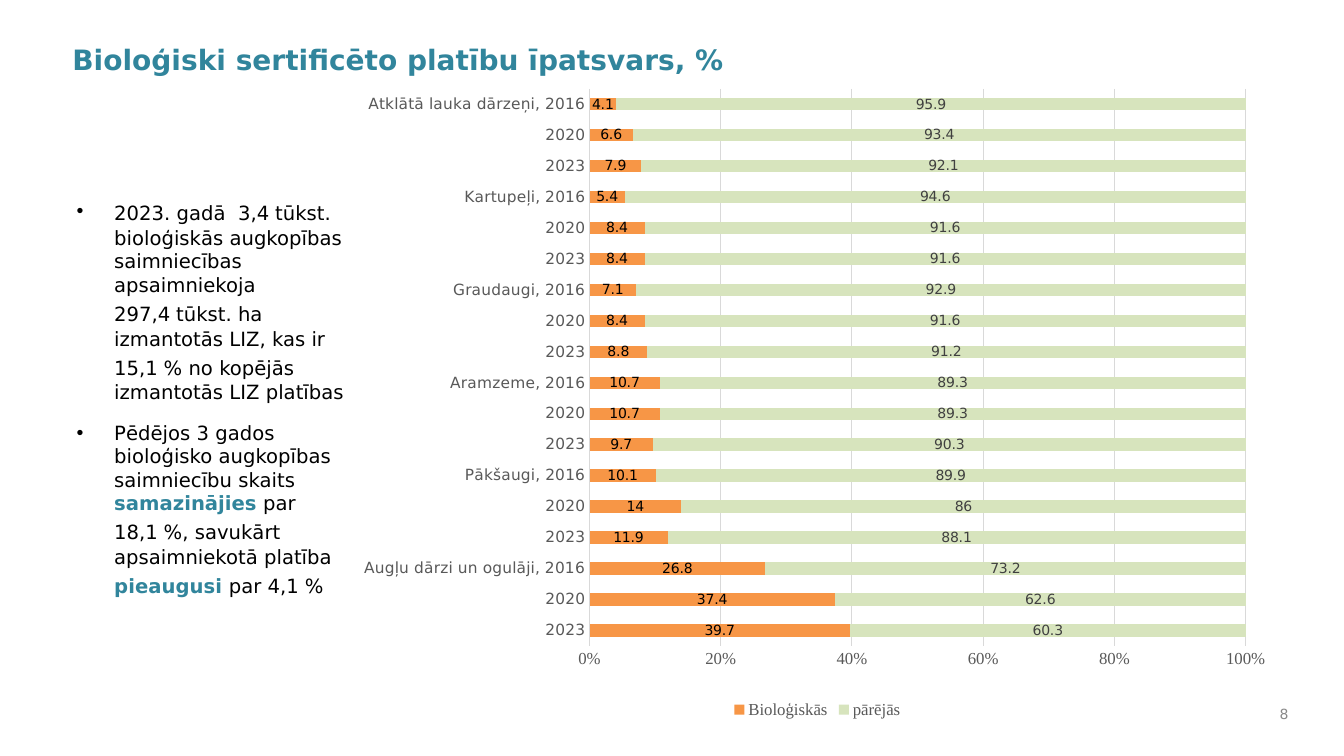
from lxml.etree import SubElement
from pptx import Presentation
from pptx.chart.data import CategoryChartData
from pptx.dml.color import RGBColor
from pptx.enum.chart import (XL_CHART_TYPE, XL_LABEL_POSITION,
                             XL_LEGEND_POSITION, XL_TICK_MARK)
from pptx.enum.text import MSO_ANCHOR, PP_ALIGN
from pptx.oxml import parse_xml
from pptx.oxml.ns import nsdecls, qn
from pptx.util import Cm, Pt

HUES = {"teal": "31859C", "black": "000000", "dark": "404040", "text": "595959",
        "page": "898989", "grid": "D9D9D9", "organic": "F79646", "rest": "D7E4BD"}
SANS, SERIF, GAP = "DejaVu Sans", "Times New Roman", "Cabin"
NBSP = chr(160)

TITLE = "Bioloģiski sertificēto platību īpatsvars, %"
PAGE = "8"
# Each bullet is a list of (text, is key word); "~" marks a no-break space
NOTES = [
    [("2023. gadā  3,4~tūkst. bioloģiskās augkopības saimniecības apsaimniekoja "
      "297,4~tūkst. ha izmantotās LIZ, kas ir 15,1~% no kopējās izmantotās LIZ "
      "platības", False)],
    [("Pēdējos 3 gados bioloģisko augkopības saimniecību skaits ", False),
     ("samazinājies", True),
     (" par 18,1~%, savukārt apsaimniekotā platība ", False),
     ("pieaugusi ", True), ("par 4,1~%", False)],
]
YEARS = ("2023", "2020", "2016")
# Organic share by crop, from the bottom bar up, in the order of YEARS
SHARES = {
    "Augļu dārzi un ogulāji": (39.7, 37.4, 26.8),
    "Pākšaugi": (11.9, 14, 10.1),
    "Aramzeme": (9.7, 10.7, 10.7),
    "Graudaugi": (8.8, 8.4, 7.1),
    "Kartupeļi": (8.4, 8.4, 5.4),
    "Atklātā lauka dārzeņi": (7.9, 6.6, 4.1),
}
SERIES = (("Bioloģiskās", "organic", "black"), ("pārējās", "rest", "dark"))
PLOT = {"x": 0.252, "y": 0.025, "w": 0.714, "h": 0.857}


def rgb(hue):
    return RGBColor.from_string(HUES[hue])


def style(font, size, hue, face=SANS, bold=False):
    font.size, font.name, font.bold = Pt(size), face, bold
    font.color.rgb = rgb(hue)


def write(para, text, size=14, **fmt):
    """Add text to a paragraph, with wider no-break spaces at each "~"."""
    for i, part in enumerate(text.split("~")):
        if i:
            run = para.add_run()
            run.text = NBSP
            style(run.font, 18, "black", GAP)
        run = para.add_run()
        run.text = part
        style(run.font, size, **fmt)


def add_box(slide, *place):
    frame = slide.shapes.add_textbox(*map(Cm, place)).text_frame
    frame.word_wrap = True
    return frame


def add_notes(slide):
    frame = add_box(slide, 1.68, 4.8, 7.34, 11.53)
    for i, note in enumerate(NOTES):
        para = frame.add_paragraph() if i else frame.paragraphs[0]
        para.space_before = para.space_after = Pt(6)
        props = para._p.get_or_add_pPr()
        props.set("marL", str(Cm(0.95)))
        props.set("indent", str(-Cm(0.95)))
        SubElement(props, qn("a:buFont")).set("typeface", "Arial")
        SubElement(props, qn("a:buChar")).set("char", "•")
        for text, key in note:
            write(para, text, hue="teal" if key else "black", bold=key)


def set_plot(chart):
    """Fix the inner plot area at the fractions in PLOT."""
    parts = '<c:layoutTarget val="inner"/>'
    parts += "".join(f'<c:{k}Mode val="edge"/>' for k in "xy")
    parts += "".join(f'<c:{k} val="{v}"/>' for k, v in PLOT.items())
    area = chart._chartSpace.chart.plotArea
    for old in area.findall(qn("c:layout")):
        area.remove(old)
    area.insert(0, parse_xml(f'<c:layout {nsdecls("c")}><c:manualLayout>{parts}'
                             '</c:manualLayout></c:layout>'))


def add_bars(slide):
    data = CategoryChartData()
    data.categories = [f"{crop}, {year}" if year == YEARS[-1] else year
                       for crop in SHARES for year in YEARS]
    organic = [v for row in SHARES.values() for v in row]
    rest = [round(100 - v, 1) for v in organic]
    for (name, _, _), vals in zip(SERIES, (organic, rest)):
        data.add_series(name, vals)
    chart = slide.shapes.add_chart(XL_CHART_TYPE.BAR_STACKED_100, Cm(9.02), Cm(1.83),
                                   Cm(23.16), Cm(16.38), data).chart
    style(chart.font, 10, "black", SERIF)
    chart.has_title = False
    chart.has_legend = True
    chart.legend.position = XL_LEGEND_POSITION.BOTTOM
    chart.legend.include_in_layout = False
    style(chart.legend.font, 12, "text", SERIF)
    set_plot(chart)

    plot = chart.plots[0]
    plot.gap_width, plot.overlap, plot.vary_by_categories = 150, 100, False
    for bars, (_, fill, ink) in zip(plot.series, SERIES):
        bars.format.fill.solid()
        bars.format.fill.fore_color.rgb = rgb(fill)
        labels = bars.data_labels
        labels.show_value = True
        labels.position = XL_LABEL_POSITION.CENTER
        style(labels.font, 10, ink)

    crops, scale = chart.category_axis, chart.value_axis
    for axis, size, face in ((crops, 11, SANS), (scale, 12, SERIF)):
        axis.major_tick_mark = axis.minor_tick_mark = XL_TICK_MARK.NONE
        style(axis.tick_labels.font, size, "text", face)
    scale.minimum_scale, scale.maximum_scale, scale.major_unit = 0, 1, 0.2
    scale.tick_labels.number_format = "0%"
    scale.tick_labels.number_format_is_linked = False
    scale.format.line.fill.background()
    scale.has_major_gridlines = True
    for line in (crops.format.line, scale.major_gridlines.format.line):
        line.color.rgb = rgb("grid")
        line.width = Pt(0.75)


def main():
    deck = Presentation()
    deck.slide_width, deck.slide_height = Cm(33.87), Cm(19.05)
    slide = deck.slides.add_slide(deck.slide_layouts[5])

    title = slide.shapes.title
    title.left, title.top, title.width, title.height = map(Cm, (1.57, 0.84, 30.6, 1.32))
    title.text_frame.vertical_anchor = MSO_ANCHOR.MIDDLE
    para = title.text_frame.paragraphs[0]
    para.alignment = PP_ALIGN.LEFT
    write(para, TITLE, 20, hue="teal", bold=True)

    add_bars(slide)
    add_notes(slide)

    frame = add_box(slide, 31.6, 17.58, 1.12, 0.84)
    frame.vertical_anchor = MSO_ANCHOR.MIDDLE
    para = frame.paragraphs[0]
    para.alignment, para.space_after = PP_ALIGN.RIGHT, Pt(6)
    write(para, PAGE, 10, hue="page")
    deck.save("out.pptx")


if __name__ == "__main__":
    main()
